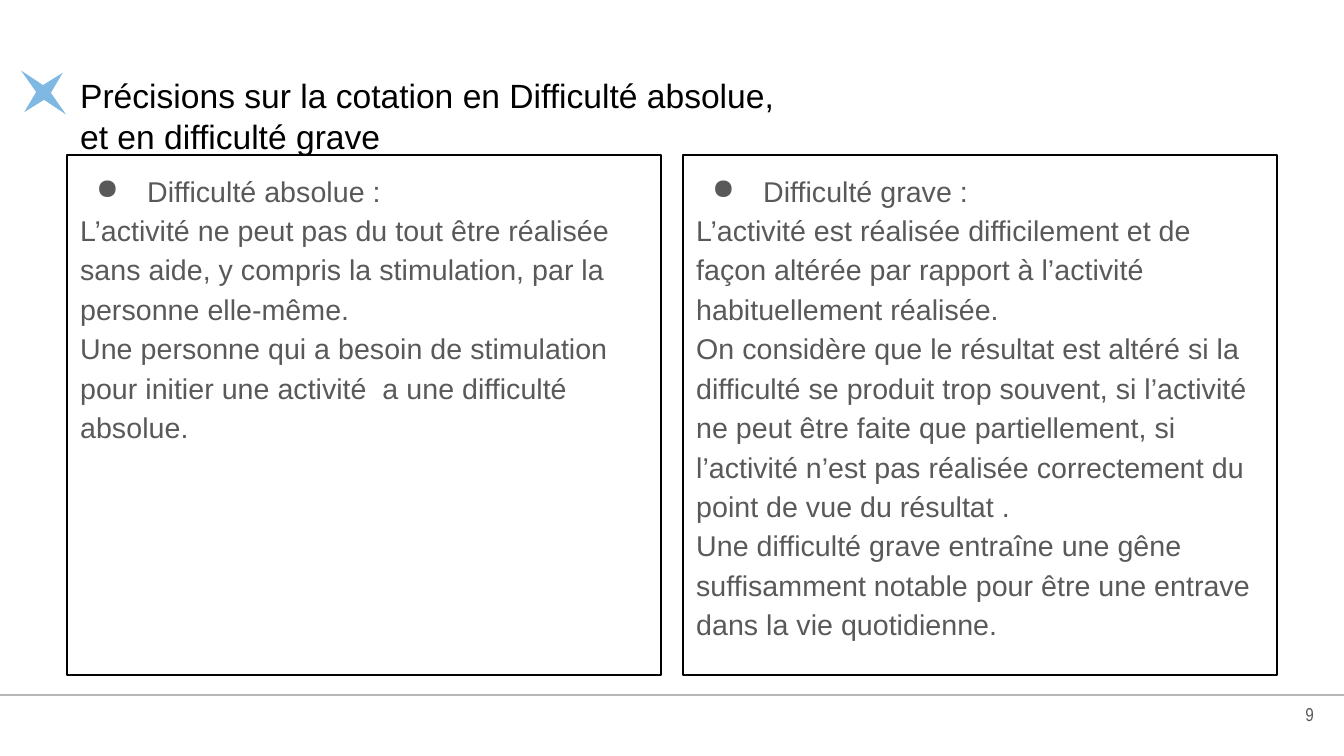
from lxml import etree
from pptx import Presentation
from pptx import util as u
from pptx.dml.color import RGBColor
from pptx.enum import shapes, text
from pptx.oxml.ns import qn

BLACK = RGBColor(0x00, 0x00, 0x00)
GREY = RGBColor(0x59, 0x59, 0x59)
RULE = RGBColor(0xB7, 0xB7, 0xB7)
BLUE = RGBColor(0x00, 0x72, 0xC6)


def px(n):
    return u.Emu(round(n * 9144000 / 1344))


def write(frame, lines, size, color, face="Arial"):
    frame.word_wrap = True
    frame.vertical_anchor = text.MSO_ANCHOR.TOP
    frame.margin_left = frame.margin_right = u.Inches(0.1)
    frame.margin_top = frame.margin_bottom = u.Inches(0.1)
    frame.text = "\n".join(lines)
    for par in frame.paragraphs:
        par.alignment = text.PP_ALIGN.LEFT
        par.font.size = u.Pt(size)
        par.font.name = face
        par.font.color.rgb = color


deck = Presentation()
deck.slide_width, deck.slide_height = px(1344), px(756)
slide = deck.slides.add_slide(deck.slide_layouts[6])
items = slide.shapes

star = items.add_shape(shapes.MSO_SHAPE.STAR_4_POINT, px(12), px(65), px(63), px(55))
star.rotation = 44.4
star.shadow.inherit = False
star.fill.solid()
star.fill.fore_color.rgb = BLUE
tint = star.fill._xPr.find(qn("a:solidFill"))[0]
etree.SubElement(tint, qn("a:alpha"), val="50000")
star.line.fill.background()

rule = items.add_connector(shapes.MSO_CONNECTOR.STRAIGHT, 0, px(695), px(1344), px(695))
rule.line.color.rgb = RULE
rule.line.width = u.Pt(0.75)
etree.SubElement(rule._element.spPr, qn("a:effectLst"))

title = items.add_textbox(px(67), px(62), px(1210), px(87))
write(title.text_frame,
      ["Précisions sur la cotation en Difficulté absolue, \vet en difficulté grave"],
      18, BLACK)

columns = [
    ["Difficulté absolue :",
     "L’activité ne peut pas du tout être réalisée sans aide, y compris la "
     "stimulation, par la personne elle-même.",
     "Une personne qui a besoin de stimulation pour initier une activité  a une "
     "difficulté absolue."],
    ["Difficulté grave :",
     "L’activité est réalisée difficilement et de façon altérée par rapport à "
     "l’activité habituellement réalisée.",
     "On considère que le résultat est altéré si la difficulté se produit trop "
     "souvent, si l’activité ne peut être faite que partiellement, si l’activité "
     "n’est pas réalisée correctement du point de vue du résultat .",
     "Une difficulté grave entraîne une gêne suffisamment notable pour être une "
     "entrave dans la vie quotidienne."],
]
for col, lines in enumerate(columns):
    box = items.add_shape(shapes.MSO_SHAPE.RECTANGLE,
                          px(67 + 616 * col), px(155), px(594), px(520))
    box.shadow.inherit = False
    box.fill.background()
    box.line.color.rgb = BLACK
    box.line.width = u.Pt(0.75)
    write(box.text_frame, lines, 15.3, GREY)
    for par in box.text_frame.paragraphs:
        par.line_spacing = 1.15
    props = box.text_frame.paragraphs[0]._p.get_or_add_pPr()
    props.set("marL", str(px(67)))
    props.set("indent", str(px(-51)))
    mark = etree.Element(qn("a:buChar"), char="●")
    props.find(qn("a:defRPr")).addprevious(mark)

page = items.add_textbox(px(1246), px(685), px(81), px(58))
write(page.text_frame, ["9"], 10, GREY, "Arial Narrow")
page.text_frame.vertical_anchor = text.MSO_ANCHOR.MIDDLE
page.text_frame.paragraphs[0].alignment = text.PP_ALIGN.RIGHT

deck.save("out.pptx")
